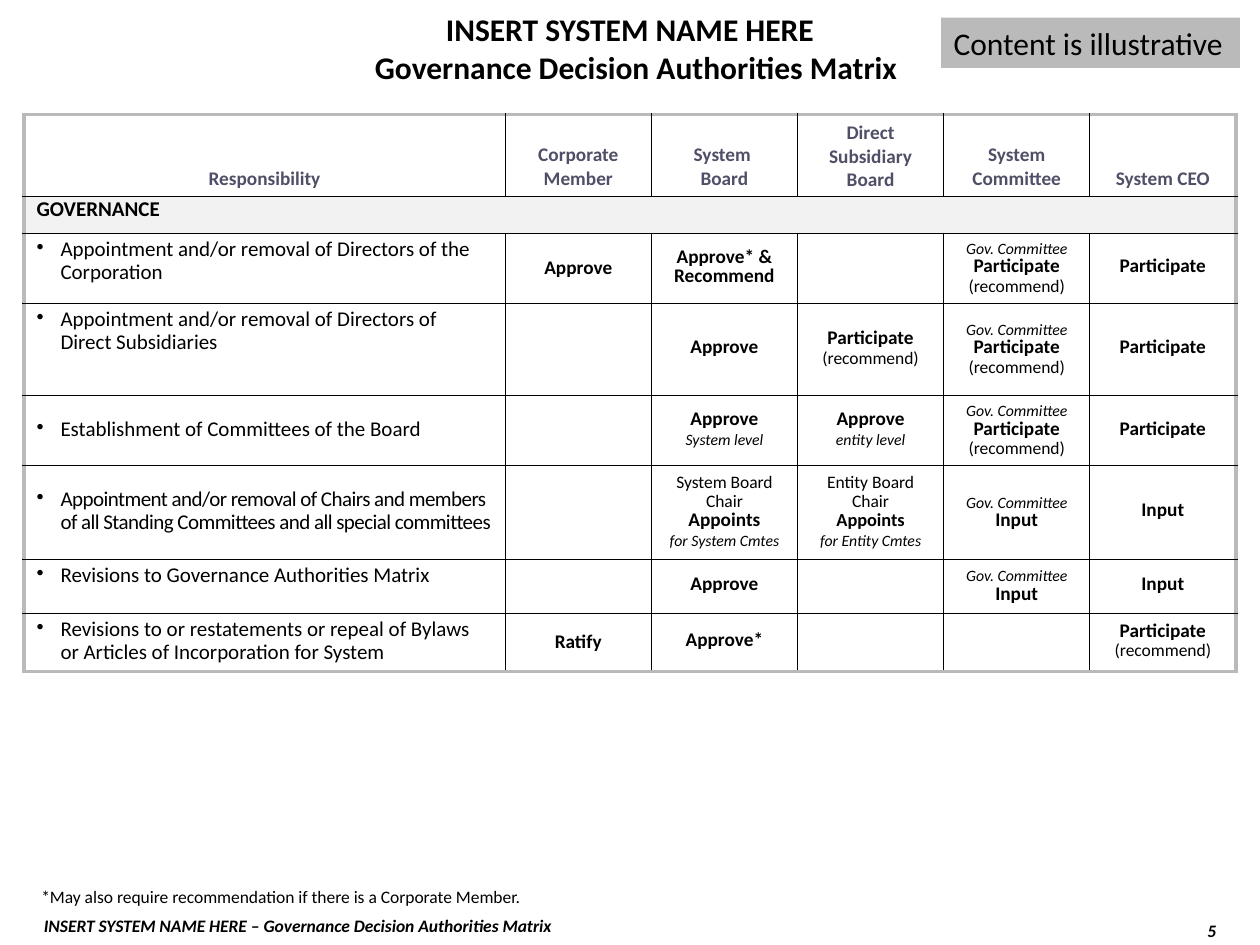
"""Build the governance decision authorities matrix slide."""
import pptx
import pptx.dml.color
import pptx.enum.shapes
import pptx.enum.text
import pptx.oxml
import pptx.oxml.ns
import pptx.util

Inches = pptx.util.Inches
Pt = pptx.util.Pt
ANCHOR = pptx.enum.text.MSO_ANCHOR
ALIGN = pptx.enum.text.PP_ALIGN
GROW = pptx.enum.text.MSO_AUTO_SIZE.SHAPE_TO_FIT_TEXT

STYLES = {
    "title": {"size": Pt(18), "bold": True},
    "stamp": {"size": Pt(18)},
    "footer": {"size": Pt(10), "bold": True, "italic": True},
    "header": {"size": Pt(11), "bold": True},
    "section": {"size": Pt(12), "bold": True},
    "duty": {"size": Pt(12)},
    "strong": {"size": Pt(11), "bold": True},
    "appoints": {"size": Pt(10.5), "bold": True},
    "plain": {"size": Pt(10)},
    "note": {"size": Pt(9), "italic": True},
}


def color(value):
    return pptx.dml.color.RGBColor.from_string(value)


def write(frame, paragraphs, text_color="000000", **paragraph_format):
    for index, runs in enumerate(paragraphs):
        paragraph = frame.add_paragraph() if index else frame.paragraphs[0]
        for name, value in paragraph_format.items():
            setattr(paragraph, name, value)
        for style, text in runs:
            for line_index, line in enumerate(text.split("\n")):
                if line_index:
                    paragraph.add_line_break()
                if line:
                    run = paragraph.add_run()
                    run.text = line
                    run.font.name = "Calibri"
                    run.font.color.rgb = color(text_color)
                    for name, value in STYLES[style].items():
                        setattr(run.font, name, value)


presentation = pptx.Presentation()
presentation.slide_width = Inches(10)
presentation.slide_height = Inches(7.5)
slide = presentation.slides.add_slide(presentation.slide_layouts[6])

text_boxes = [
    ((0.25, 7.21, 6.5, 0.27), ALIGN.LEFT, ANCHOR.TOP,
     [[("footer", "INSERT SYSTEM NAME HERE – Governance Decision Authorities Matrix")]]),
    ((0, 0, 10, 0.76), ALIGN.CENTER, ANCHOR.MIDDLE,
     [[("title", "INSERT SYSTEM NAME HERE")],
      [("title", "Governance Decision Authorities Matrix")]]),
    ((7.64, 7.25, 2.11, 0.25), ALIGN.RIGHT, ANCHOR.TOP, [[("footer", "5")]]),
    ((0.23, 6.98, 8.13, 0.27), ALIGN.LEFT, ANCHOR.TOP,
     [[("plain", "*May also require recommendation if there is a Corporate Member.")]]),
]
for position, alignment, anchor, paragraphs in text_boxes:
    frame = slide.shapes.add_textbox(*map(Inches, position)).text_frame
    frame.word_wrap = True
    frame.vertical_anchor = anchor
    write(frame, paragraphs, alignment=alignment)
    if len(paragraphs) == 2:
        properties = frame.paragraphs[1]._p.get_or_add_pPr()
        properties.set("marL", str(Inches(0.1)))

stamp = slide.shapes.add_shape(
    pptx.enum.shapes.MSO_SHAPE.RECTANGLE, Inches(7.47), Inches(0.14), Inches(2.37), Inches(0.4))
stamp.shadow.inherit = False
stamp.fill.solid()
stamp.fill.fore_color.rgb = color("BABABA")
stamp.line.fill.background()
stamp.text_frame.word_wrap = False
stamp.text_frame.auto_size = GROW
stamp.text_frame.vertical_anchor = ANCHOR.TOP
write(stamp.text_frame, [[("stamp", "Content is illustrative")]], alignment=ALIGN.LEFT)

headers = ["Responsibility", "Corporate Member", "System \nBoard",
           "Direct Subsidiary Board", "System Committee", "System CEO"]
approve = [[("strong", "Approve")]]
participate = [[("strong", "Participate")]]
recommend = [[("strong", "Participate\n"), ("plain", "(recommend)")]]
committee = [[("note", "Gov. Committee")]]
decide = [[("strong", "Input")]]
duties = [
    ("Appointment and/or removal of Directors of the Corporation", ANCHOR.TOP,
     [approve, [[("strong", "Approve* & Recommend")]], [], committee + recommend, participate]),
    ("Appointment and/or removal of Directors of Direct Subsidiaries", ANCHOR.TOP,
     [[], approve, recommend, committee + recommend, participate]),
    ("Establishment of Committees of the Board", ANCHOR.MIDDLE,
     [[], approve + [[("note", "System level")]],
      [[("strong", "Approve\n"), ("note", "entity level")]],
      committee + recommend, participate]),
    ("Appointment and/or removal of Chairs and members of all Standing Committees "
     "and all special committees", ANCHOR.MIDDLE,
     [[], [[("plain", "System Board Chair\n"), ("strong", "Appoints\n"),
            ("note", "for System Cmtes")]],
      [[("plain", "Entity Board Chair")], [("appoints", "Appoints")],
       [("note", "for Entity Cmtes")]],
      committee + decide, decide]),
    ("Revisions to Governance Authorities Matrix", ANCHOR.TOP,
     [[], approve, [], committee + decide, decide]),
    ("Revisions to or restatements or repeal of Bylaws or Articles of Incorporation for System",
     ANCHOR.TOP, [[[("strong", "Ratify")]], [[("strong", "Approve*")]], [], [], recommend]),
]

column_widths = [3.82] + [1.16] * 5
row_heights = [0.43, 0.29, 0.47, 0.73, 0.43, 0.74, 0.43, 0.43]
last_row, last_column = len(row_heights) - 1, len(column_widths) - 1
table_shape = slide.shapes.add_table(
    len(row_heights), len(column_widths), Inches(0.19), Inches(0.91), Inches(9.62), Inches(4.42))
table = table_shape.table
table.first_row = False
table.horz_banding = False
style_id = table._tbl.tblPr.find(pptx.oxml.ns.qn("a:tableStyleId"))
style_id.text = "{2D5ABB26-0587-4C30-8999-92F81FD0307C}"
for column, width in zip(table.columns, column_widths):
    column.width = Inches(width)
for row, height in zip(table.rows, row_heights):
    row.height = Inches(height)
table_shape.height = Inches(4.42)
table.cell(1, 0).merge(table.cell(1, last_column))

for row_index in range(last_row + 1):
    for column_index in range(last_column + 1):
        cell = table.cell(row_index, column_index)
        if cell.is_spanned:
            continue
        right_column = last_column if cell.is_merge_origin else column_index
        outer_sides = {"L": column_index == 0, "R": right_column == last_column,
                       "T": row_index == 0, "B": row_index == last_row}
        for side, outer in outer_sides.items():
            line_color, line_width = ("BABABA", 2.25) if outer else ("000000", 0.75)
            cell._tc.get_or_add_tcPr().append(pptx.oxml.parse_xml(
                f'<a:ln{side} {pptx.oxml.ns.nsdecls("a")} w="{Pt(line_width)}"><a:solidFill>'
                f'<a:srgbClr val="{line_color}"/></a:solidFill></a:ln{side}>'))
        cell.fill.background()

for column_index, header in enumerate(headers):
    cell = table.cell(0, column_index)
    cell.vertical_anchor = ANCHOR.BOTTOM
    write(cell.text_frame, [[("header", header)]], "4F4F67", alignment=ALIGN.CENTER)

section = table.cell(1, 0)
section.fill.solid()
section.fill.fore_color.rgb = color("F2F2F2")
write(section.text_frame, [[("section", "GOVERNANCE")]], line_spacing=Pt(11))

for row_index, (duty, anchor, authorities) in enumerate(duties, start=2):
    cell = table.cell(row_index, 0)
    cell.vertical_anchor = anchor
    write(cell.text_frame, [[("duty", duty)]], line_spacing=Pt(13))
    paragraph = cell.text_frame.paragraphs[0]
    properties = paragraph._p.get_or_add_pPr()
    properties.set("marL", str(Inches(0.19)))
    properties.set("indent", str(-Inches(0.19)))
    properties.append(pptx.oxml.parse_xml(
        f'<a:buChar {pptx.oxml.ns.nsdecls("a")} char="•"/>'))
    if "Chairs" in duty:
        paragraph.runs[0].font._element.set("spc", "-30")
    for column_index, paragraphs in enumerate(authorities, start=1):
        cell = table.cell(row_index, column_index)
        cell.vertical_anchor = ANCHOR.MIDDLE
        spacing = Pt(13) if column_index == 1 else Pt(11)
        write(cell.text_frame, paragraphs, alignment=ALIGN.CENTER, line_spacing=spacing)

presentation.save("out.pptx")
